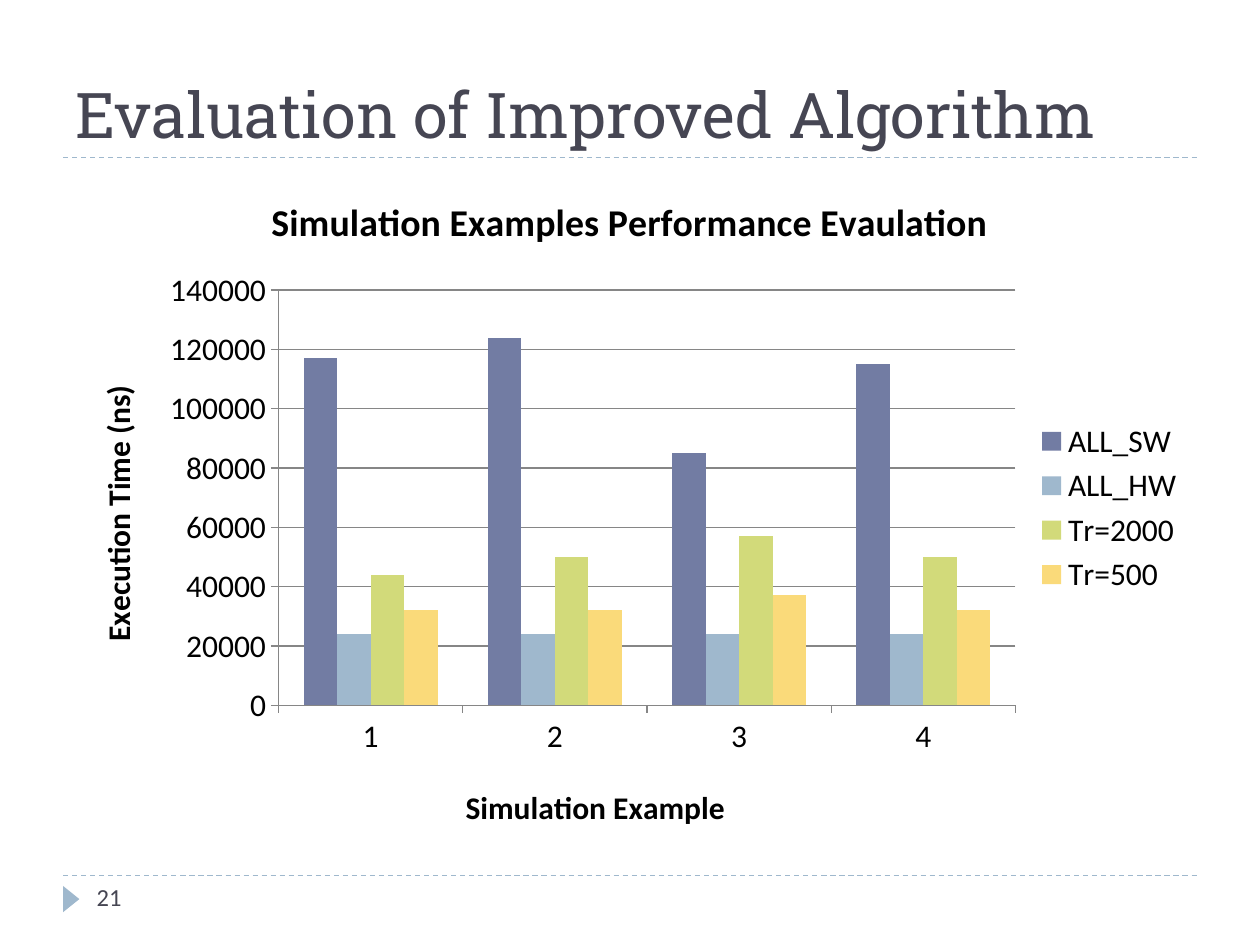
import pptx
import pptx.chart.data
import pptx.dml.color
import pptx.enum.chart
import pptx.enum.dml
import pptx.enum.shapes
import pptx.enum.text
import pptx.oxml
import pptx.util

Cm = pptx.util.Cm
Pt = pptx.util.Pt
RGBColor = pptx.dml.color.RGBColor

INK = RGBColor(0x46, 0x46, 0x53)
BLACK = RGBColor(0, 0, 0)
GREY = RGBColor(0x86, 0x86, 0x86)
BLUE = RGBColor(0x72, 0x7C, 0xA3)
SKY = RGBColor(0x9F, 0xB8, 0xCD)
LIME = RGBColor(0xD2, 0xDA, 0x7A)
GOLD = RGBColor(0xFA, 0xDA, 0x7A)

HEAD = "Evaluation of Improved Algorithm"
PAGE = "21"
NAME = "Simulation Examples Performance Evaulation"
CATS = [1, 2, 3, 4]
ROWS = [
    ("ALL_SW", BLUE, [117000, 124000, 85000, 115000]),
    ("ALL_HW", SKY, [24000, 24000, 24000, 24000]),
    ("Tr=2000", LIME, [44000, 50000, 57000, 50000]),
    ("Tr=500", GOLD, [32000, 32000, 37000, 32000]),
]
LEFT, WIDE = 1.27, 22.86
RULES = [3.18, 17.65]
FONTS = {
    "head": {"name": "Roboto Slab", "size": Pt(36), "bold": False},
    "page": {"name": "Calibri", "size": Pt(14)},
    "text": {"name": "Calibri", "size": Pt(18)},
    "axis": {"name": "Calibri", "size": Pt(18), "bold": True},
    "name": {"name": "Calibri", "size": Pt(21.6), "bold": True},
}


def style(font, kind, color=BLACK):
    for key, val in FONTS[kind].items():
        setattr(font, key, val)
    font.color.rgb = color


def label(frame, text, kind, color=BLACK):
    frame.text = text
    style(frame.paragraphs[0].runs[0].font, kind, color)


def place(node, prior, **spots):
    for old in node.findall(pptx.oxml.ns.qn("c:layout")):
        node.remove(old)
    parts = "".join(f'<c:{key} val="{val}"/>' for key, val in spots.items())
    node.insert(prior, pptx.oxml.parse_xml(
        f'<c:layout {pptx.oxml.ns.nsdecls("c")}><c:manualLayout>'
        f"{parts}</c:manualLayout></c:layout>"))


def rule(slide, top):
    line = slide.shapes.add_connector(
        pptx.enum.shapes.MSO_CONNECTOR.STRAIGHT,
        Cm(LEFT), Cm(top), Cm(LEFT + WIDE), Cm(top))
    line.line.color.rgb = SKY
    line.line.width = Pt(0.75)
    line.line.dash_style = pptx.enum.dml.MSO_LINE.DASH
    props = line._element.spPr
    props.append(pptx.oxml.parse_xml(
        f'<a:effectLst {pptx.oxml.ns.nsdecls("a")}/>'))


def title(slide):
    box = slide.shapes.title
    box.left, box.top, box.width, box.height = map(
        Cm, (LEFT, 0.43, WIDE, 2.74))
    frame = box.text_frame
    label(frame, HEAD, "head", INK)
    frame.word_wrap = True
    frame.vertical_anchor = pptx.enum.text.MSO_ANCHOR.BOTTOM
    frame.paragraphs[0].alignment = pptx.enum.text.PP_ALIGN.LEFT


def footer(slide):
    mark = slide.shapes.add_shape(
        pptx.enum.shapes.MSO_SHAPE.ISOSCELES_TRIANGLE,
        Cm(1.17), Cm(17.96), Cm(0.53), Cm(0.33))
    mark.rotation = 90
    mark.shadow.inherit = False
    mark.fill.solid()
    mark.fill.fore_color.rgb = SKY
    mark.line.fill.background()
    box = slide.shapes.add_textbox(Cm(1.7), Cm(17.65), Cm(5.5), Cm(1.02))
    box.text_frame.word_wrap = True
    label(box.text_frame, PAGE, "page", INK)


def graph(slide):
    data = pptx.chart.data.CategoryChartData()
    data.categories = CATS
    for name, color, vals in ROWS:
        data.add_series(name, vals)
    chart = slide.shapes.add_chart(
        pptx.enum.chart.XL_CHART_TYPE.COLUMN_CLUSTERED,
        Cm(LEFT), Cm(3.38), Cm(WIDE), Cm(13.72), data).chart
    style(chart.font, "text")
    chart.has_title = True
    label(chart.chart_title.text_frame, NAME, "name")
    chart.has_legend = True
    chart.legend.position = pptx.enum.chart.XL_LEGEND_POSITION.RIGHT
    chart.legend.include_in_layout = False

    plot = chart.plots[0]
    plot.gap_width = 150
    plot.overlap = 0
    plot.vary_by_categories = False
    for series, (name, color, vals) in zip(plot.series, ROWS):
        series.format.fill.solid()
        series.format.fill.fore_color.rgb = color

    across, up = chart.category_axis, chart.value_axis
    for axis, text in ((across, "Simulation Example"),
                       (up, "Execution Time (ns)")):
        label(axis.axis_title.text_frame, text, "axis")
        axis.major_tick_mark = pptx.enum.chart.XL_TICK_MARK.OUTSIDE
        axis.format.line.color.rgb = GREY
        axis.format.line.width = Pt(0.75)
    up.minimum_scale, up.maximum_scale, up.major_unit = 0, 140000, 20000
    up.has_major_gridlines = True
    up.major_gridlines.format.line.color.rgb = GREY
    up.major_gridlines.format.line.width = Pt(0.75)

    area = chart._chartSpace.chart.plotArea
    place(area, 0, layoutTarget="inner", xMode="edge", yMode="edge",
          x=0.19, y=0.18, w=0.65, h=0.61)
    place(across.axis_title._element, 1, xMode="edge", yMode="edge",
          x=0.35, y=0.9)


def main():
    deck = pptx.Presentation()
    deck.slide_width, deck.slide_height = Cm(25.4), Cm(19.05)
    slide = deck.slides.add_slide(deck.slide_layouts[5])
    for top in RULES:
        rule(slide, top)
    title(slide)
    footer(slide)
    graph(slide)
    deck.save("out.pptx")


if __name__ == "__main__":
    main()
